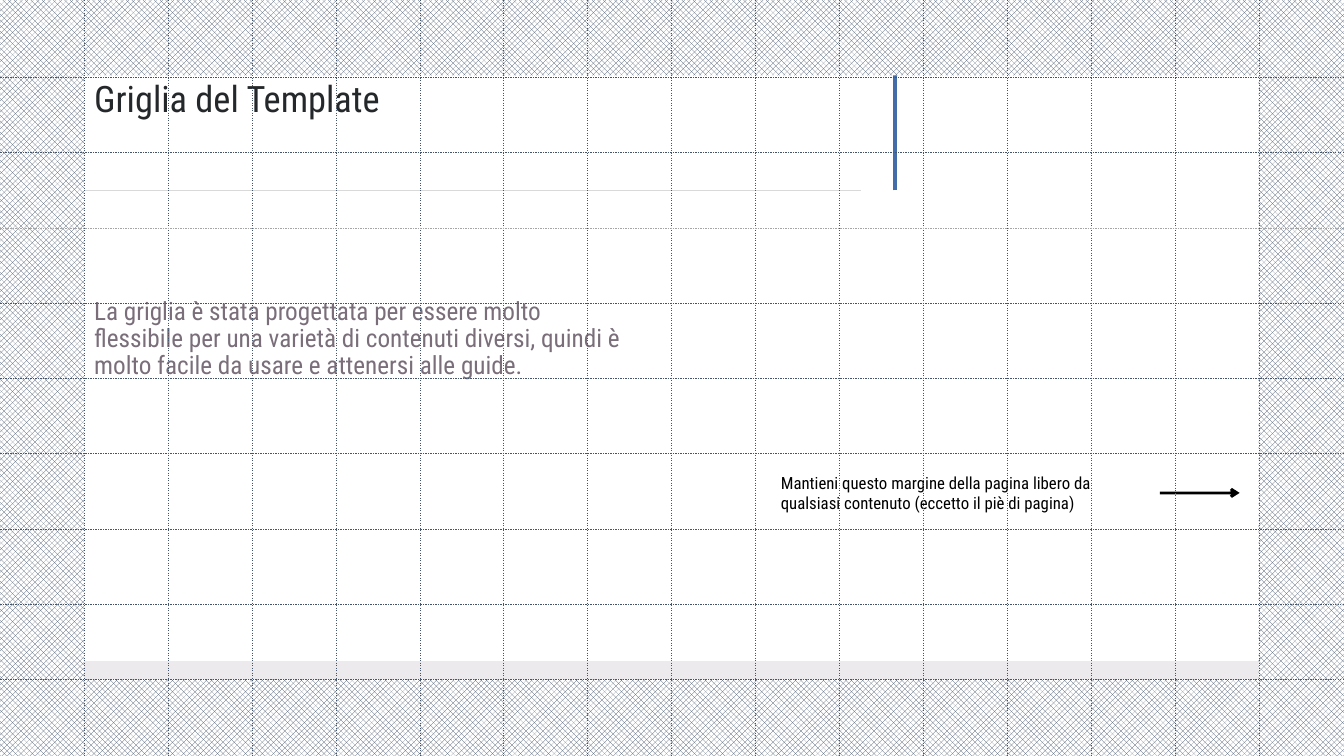
from lxml import etree
from pptx import Presentation
from pptx.dml.color import RGBColor
from pptx.enum.dml import MSO_LINE, MSO_PATTERN
from pptx.enum.shapes import MSO_CONNECTOR, MSO_SHAPE
from pptx.enum.text import MSO_ANCHOR, MSO_AUTO_SIZE, PP_ALIGN
from pptx.oxml.ns import qn
from pptx.util import Cm, Pt

STRAIGHT, RECT = MSO_CONNECTOR.STRAIGHT, MSO_SHAPE.RECTANGLE
DASH, DIAMONDS = MSO_LINE.DASH, MSO_PATTERN.OUTLINED_DIAMOND
LEFT, TOP, MIDDLE = PP_ALIGN.LEFT, MSO_ANCHOR.TOP, MSO_ANCHOR.MIDDLE
GROW = MSO_AUTO_SIZE.SHAPE_TO_FIT_TEXT

# Content
TITLE = "Griglia del Template"
BODY = ("La griglia è stata progettata per essere molto flessibile per una varietà "
        "di contenuti diversi, quindi è molto facile da usare e attenersi alle guide.")
CAPTION = ("Mantieni questo margine della pagina libero da qualsiasi contenuto "
           "(eccetto il piè di pagina)")
FONT = "Roboto Condensed"
COLORS = {"title": "25282A", "muted": "796E79", "black": "000000", "white": "FFFFFF",
          "grid": "44546A", "grid_light": "A5A5A5", "rule": "D9D9D9", "accent": "426DA9"}

# Measures in centimetres
WIDTH, HEIGHT = 33.87, 19.05
GRID_LEFT, GRID_RIGHT, COLUMNS = 2.12, 31.72, 14
GRID_TOP, GRID_BOTTOM, ROWS = 1.95, 17.12, 8
FRAME_TOP = 1.9
LIGHT_ROW = 2


def color(name):
    return RGBColor.from_string(COLORS[name])


def box(left, top, width, height):
    return Cm(left), Cm(top), Cm(width), Cm(height)


def place(sp, *measures):
    sp.left, sp.top, sp.width, sp.height = box(*measures)


def write(sp, text, size, fill, anchor=TOP, spacing=None):
    tf = sp.text_frame
    tf.word_wrap = True
    tf.vertical_anchor = anchor
    p = tf.paragraphs[0]
    pPr = p._p.get_or_add_pPr()
    pPr.set("marL", "0")
    pPr.set("indent", "0")
    etree.SubElement(pPr, qn("a:buNone"))
    p.alignment = LEFT
    p.space_before = Pt(0)
    if spacing:
        p.line_spacing = spacing
    r = p.add_run()
    r.text = text
    r.font.name, r.font.size = FONT, Pt(size)
    r.font.color.rgb = color(fill)


def add_line(x1, y1, x2, y2, stroke, width, dash=None):
    line = s.shapes.add_connector(STRAIGHT, Cm(x1), Cm(y1), Cm(x2), Cm(y2))
    line.line.color.rgb = color(stroke)
    line.line.width = Pt(width)
    if dash:
        line.line.dash_style = dash
    etree.SubElement(line._element.spPr, qn("a:effectLst"))
    return line


prs = Presentation()
prs.slide_width, prs.slide_height = Cm(WIDTH), Cm(HEIGHT)
s = prs.slides.add_slide(prs.slide_layouts[1])

# Title and body
title, body = s.shapes.title, s.placeholders[1]
place(title, 2.12, 1.98, 21.16, 1.14)
write(title, TITLE, size=26, fill="title", anchor=MIDDLE, spacing=0.9)
place(body, 2.12, 7.39, 14, 7.85)
write(body, BODY, size=18, fill="muted", spacing=0.9)

# Footer band and rules
band = s.shapes.add_shape(RECT, *box(2.08, 16.66, 29.69, 2.39))
band.shadow.inherit = False
band.fill.solid()
band.fill.fore_color.rgb = color("muted")
tint = band.fill._xPr.find(qn("a:solidFill"))[0]
etree.SubElement(tint, qn("a:alpha"), val="14000")
band.line.fill.background()
add_line(21.69, 4.8, 2.08, 4.8, "rule", 1)
add_line(22.56, 4.8, 22.56, 1.78, "accent", 3)

# Hatched margin with an open centre
outer = [(0, 0), (WIDTH, 0), (WIDTH, HEIGHT), (0, HEIGHT)]
inner = [(GRID_LEFT, FRAME_TOP), (GRID_LEFT, GRID_BOTTOM),
         (GRID_RIGHT, GRID_BOTTOM), (GRID_RIGHT, FRAME_TOP)]
outer, inner = ([(Cm(x), Cm(y)) for x, y in ring] for ring in (outer, inner))
builder = s.shapes.build_freeform(*outer[0])
builder.add_line_segments(outer[1:], close=True)
builder.move_to(*inner[0])
builder.add_line_segments(inner[1:], close=True)
margin = builder.convert_to_shape()
margin.shadow.inherit = False
margin.fill.patterned()
margin.fill.pattern = DIAMONDS
margin.fill.fore_color.rgb = color("grid")
margin.fill.back_color.rgb = color("white")
margin.line.fill.background()

# Margin note and arrow
caption = s.shapes.add_textbox(*box(19.43, 11.79, 9.8, 1.27))
write(caption, CAPTION, size=12, fill="black")
caption.text_frame.auto_size = GROW
arrow = add_line(29.23, 12.42, 31.24, 12.42, "black", 2)
arrow.begin_connect(caption, 3)
etree.SubElement(arrow.line._get_or_add_ln(), qn("a:tailEnd"), type="arrow")

# Guide grid
for i in range(COLUMNS + 1):
    x = GRID_LEFT + i * (GRID_RIGHT - GRID_LEFT) / COLUMNS
    add_line(x, 0, x, HEIGHT, "grid", 0.25, DASH)
for j in range(ROWS + 1):
    y = GRID_TOP + j * (GRID_BOTTOM - GRID_TOP) / ROWS
    add_line(WIDTH, y, 0, y, "grid_light" if j == LIGHT_ROW else "grid", 0.25, DASH)

prs.save("out.pptx")
